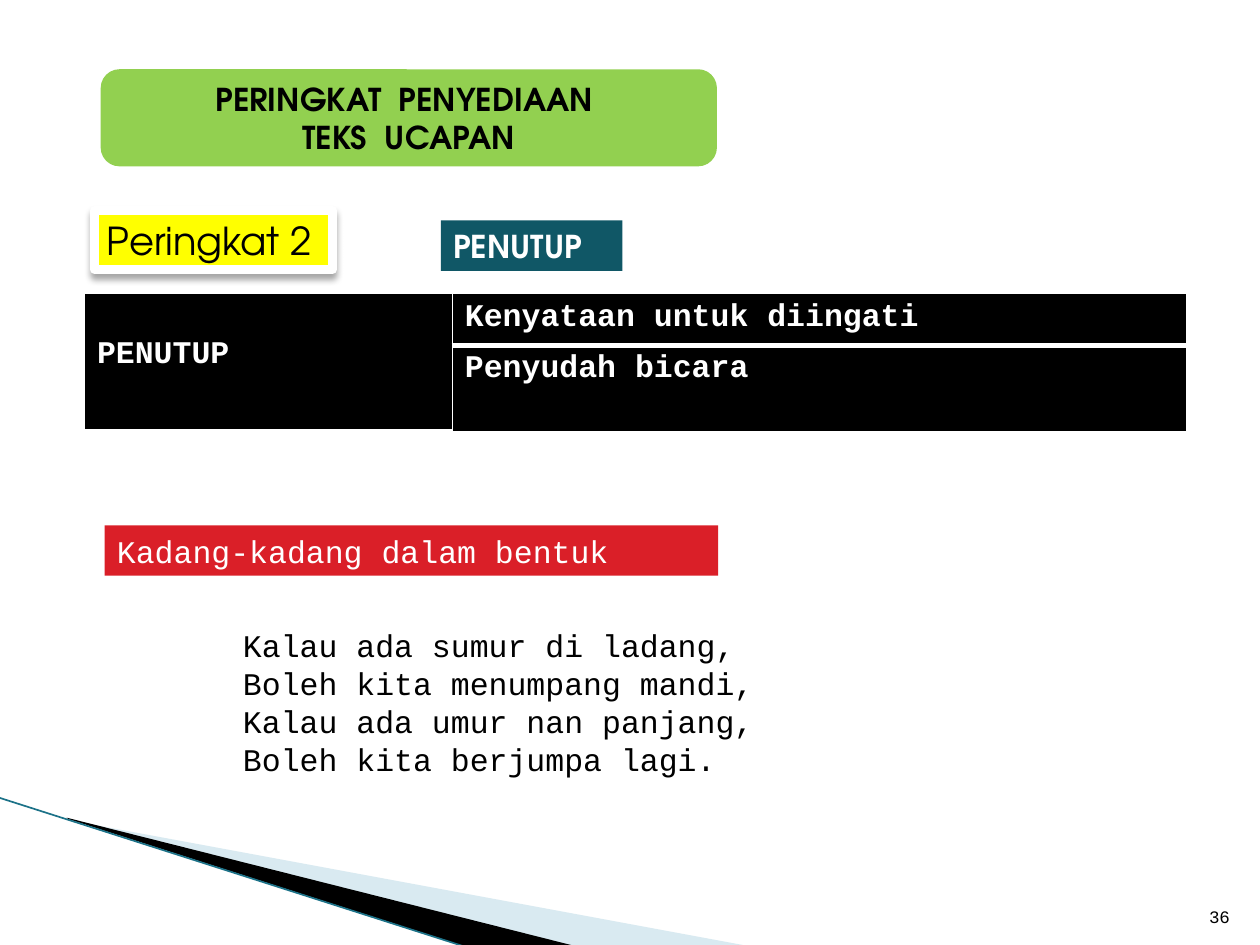
from dataclasses import dataclass

from lxml.etree import SubElement
from pptx import Presentation
from pptx.dml.color import RGBColor
from pptx.enum.shapes import MSO_CONNECTOR as Link, MSO_SHAPE as Form
from pptx.enum.text import MSO_ANCHOR as Anchor, PP_ALIGN as Align
from pptx.oxml.ns import qn
from pptx.util import Inches, Pt

ROUND_FONT = "TeX Gyre Adventor"
MONO = "Courier New"
BLACK, WHITE = "000000", "FFFFFF"


@dataclass
class Label:
    text: str
    left: float
    top: float
    width: float
    height: float
    fill: str
    color: str = BLACK
    font: str = ROUND_FONT
    size: float = 18
    bold: bool = False
    form: Form = Form.RECTANGLE
    line: str = ""
    weight: float = 0
    align: Align = Align.LEFT
    anchor: Anchor = Anchor.TOP


@dataclass
class Wedge:
    points: list[tuple[float, float]]
    fill: str
    alpha: int = 100


WEDGES = [
    Wedge([(0.55, 6.51), (5.95, 7.51), (4.56, 7.51), (0.55, 6.5)], "A0CBDC", 40),
    Wedge([(0.53, 6.49), (4.57, 7.51), (3.72, 7.52), (0.54, 6.5)], BLACK),
]
TITLE = Label("PERINGKAT  PENYEDIAAN \nTEKS  UCAPAN", 0.83, 0.58, 4.83, 0.71, "92D050",
              bold=True, form=Form.ROUNDED_RECTANGLE, line="92D050", weight=4.33,
              align=Align.CENTER, anchor=Anchor.MIDDLE)
STAGE = Label("Peringkat 2", 0.75, 1.67, 1.89, 0.47, "FFFF00", size=22, line=WHITE, weight=5)
PART = Label("PENUTUP", 3.5, 1.75, 1.44, 0.4, "105766", WHITE, bold=True)
NOTE = Label("Kadang-kadang dalam bentuk", 0.83, 4.17, 4.87, 0.4, "DA1F28", WHITE, MONO)
POEM = "\n".join([
    "Kalau ada sumur di ladang,",
    "Boleh kita menumpang mandi,",
    "Kalau ada umur nan panjang,",
    "Boleh kita berjumpa lagi.",
])


def paint(target, color: str) -> None:
    target.solid()
    target.fore_color.rgb = RGBColor.from_string(color)


def add_node(parent, tag: str, **attrs):
    return SubElement(parent, qn(tag), {key: str(val) for key, val in attrs.items()})


def write(frame, text: str, *, font: str = MONO, size: float = 18, color: str = BLACK,
          bold: bool = False, align: Align = Align.LEFT, anchor: Anchor = Anchor.TOP) -> None:
    frame.word_wrap = True
    frame.vertical_anchor = anchor
    for index, line in enumerate(text.split("\n")):
        para = frame.add_paragraph() if index else frame.paragraphs[0]
        para.alignment = align
        run = para.add_run()
        run.text = line
        run.font.name, run.font.size, run.font.bold = font, Pt(size), bold
        paint(run.font.fill, color)


def draw_label(slide, label: Label):
    box = [Inches(v) for v in (label.left, label.top, label.width, label.height)]
    shape = slide.shapes.add_shape(label.form, *box)
    shape.shadow.inherit = False
    paint(shape.fill, label.fill)
    if label.line:
        paint(shape.line.fill, label.line)
        shape.line.width = Pt(label.weight)
    else:
        shape.line.fill.background()
    write(shape.text_frame, label.text, font=label.font, size=label.size, color=label.color,
          bold=label.bold, align=label.align, anchor=label.anchor)
    return shape


def draw_text(slide, text: str, left: float, top: float, width: float, height: float, **style) -> None:
    box = slide.shapes.add_textbox(Inches(left), Inches(top), Inches(width), Inches(height))
    write(box.text_frame, text, **style)


def draw_wedge(slide, wedge: Wedge) -> None:
    first, *rest = [(Inches(x), Inches(y)) for x, y in wedge.points]
    pen = slide.shapes.build_freeform(*first)
    pen.add_line_segments(rest, close=True)
    shape = pen.convert_to_shape()
    shape.shadow.inherit = False
    paint(shape.fill, wedge.fill)
    shape.line.fill.background()
    if wedge.alpha < 100:
        tone = shape._element.spPr.find(qn("a:solidFill"))[0]
        add_node(tone, "a:alpha", val=wedge.alpha * 1000)


def draw_edge(slide) -> None:
    edge = slide.shapes.add_connector(
        Link.STRAIGHT, Inches(-0.01), Inches(6.33), Inches(3.71), Inches(7.52))
    paint(edge.line.fill, "1C7288")
    edge.line.width = Pt(0.95)
    add_node(edge._element.spPr, "a:effectLst")


def cast_shade(shape) -> None:
    effects = shape._element.spPr.find(qn("a:effectLst"))
    shade = add_node(effects, "a:outerShdw", blurRad=Pt(4), dist=Pt(3), dir=90 * 60000,
                     algn="tl", rotWithShape=0)
    tone = add_node(shade, "a:srgbClr", val=BLACK)
    add_node(tone, "a:alpha", val=35000)


def frame_cell(cell, base: float) -> None:
    props = cell._tc.get_or_add_tcPr()
    for spot, (side, weight) in enumerate(zip("LRTB", (1, 1, 1, base))):
        line = props.makeelement(qn(f"a:ln{side}"), {"w": str(Pt(weight))})
        add_node(add_node(line, "a:solidFill"), "a:srgbClr", val=WHITE)
        props.insert(spot, line)


def draw_table(slide) -> None:
    table = slide.shapes.add_table(
        2, 2, Inches(0.67), Inches(2.33), Inches(8.75), Inches(0.81)).table
    for column, width in zip(table.columns, (2.92, 5.83)):
        column.width = Inches(width)
    for row, base in zip(table.rows, (3, 1)):
        row.height = Inches(0.41)
        for cell in row.cells:
            paint(cell.fill, BLACK)
            frame_cell(cell, base)
    head = table.cell(0, 0)
    head.merge(table.cell(1, 0))
    head.margin_top = Inches(0.35)
    cells = (head, table.cell(0, 1), table.cell(1, 1))
    for cell, text in zip(cells, ("PENUTUP", "Kenyataan untuk diingati", "Penyudah bicara")):
        write(cell.text_frame, text, color=WHITE, bold=True)


def main() -> None:
    deck = Presentation()
    deck.slide_width, deck.slide_height = Inches(10), Inches(7.5)
    slide = deck.slides.add_slide(deck.slide_layouts[6])
    for wedge in WEDGES:
        draw_wedge(slide, wedge)
    draw_edge(slide)
    draw_label(slide, TITLE)
    cast_shade(draw_label(slide, STAGE))
    draw_label(slide, PART)
    draw_table(slide)
    draw_label(slide, NOTE)
    draw_text(slide, POEM, 1.83, 4.92, 6.42, 1.31)
    draw_text(slide, "36", 9.46, 7.01, 0.4, 0.4, size=10, align=Align.RIGHT, anchor=Anchor.BOTTOM)
    deck.save("out.pptx")


if __name__ == "__main__":
    main()
